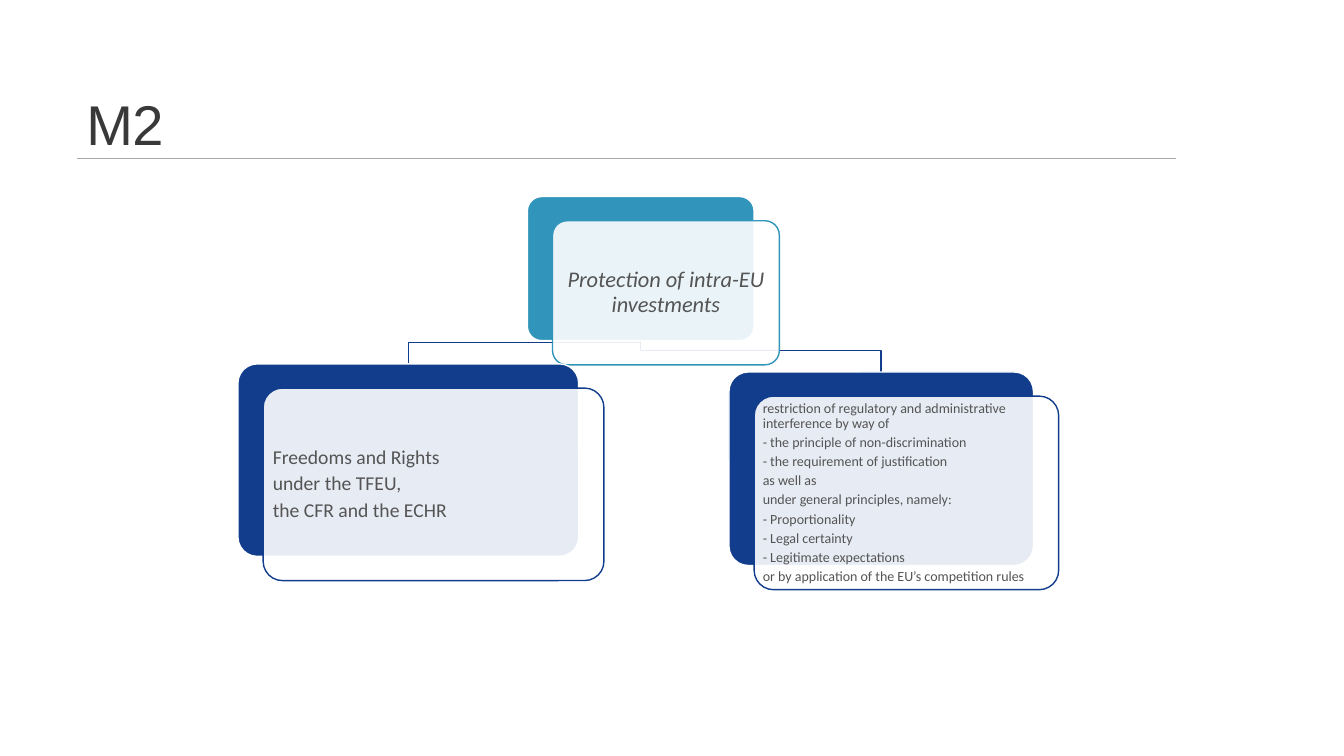
import pptx
import pptx.util
import pptx.dml.color
import pptx.enum.shapes
import pptx.enum.text
import pptx.oxml.ns
import lxml.etree

Inches = pptx.util.Inches
Pt = pptx.util.Pt
ALIGN = pptx.enum.text.PP_ALIGN
ANCHOR = pptx.enum.text.MSO_ANCHOR

COLORS = {
    "title": "393939",
    "rule": "AAAAAA",
    "text": "545454",
    "teal": "3194BA",
    "navy": "123D8C",
    "white": "FFFFFF",
}
CARD_OFFSET = (0.25, 0.24)
ELBOW_RISE = 0.21

TOPIC_BOX = (5.23, 1.95, 2.25, 1.43)
RIGHTS_BOX = (2.36, 3.61, 3.38, 1.91)
LIMITS_BOX = (7.23, 3.69, 3.02, 1.92)

TOPIC = ["Protection of intra-EU investments"]
RIGHTS = ["Freedoms and Rights", "under the TFEU,", "the CFR and the ECHR"]
LIMITS = [
    "restriction of regulatory and administrative interference by way of",
    "- the principle of non-discrimination",
    "- the requirement of justification",
    "as well as",
    "under general principles, namely:",
    "- Proportionality\u00a0",
    "- Legal certainty\u00a0",
    "- Legitimate expectations\u00a0",
    "or by application of the EU’s competition rules",
]


def rgb(name):
    return pptx.dml.color.RGBColor.from_string(COLORS[name])


def set_line(shape, color, width):
    shape.line.color.rgb = rgb(color)
    shape.line.width = Pt(width)


def add_text(paragraph, text, font, size, color):
    run = paragraph.add_run()
    run.text = text
    run.font.name = font
    run.font.size = Pt(size)
    run.font.color.rgb = rgb(color)
    return run


def add_title(slide, box, text):
    left, top, width, height = box
    rule_y = top + height - 0.04
    rule = slide.shapes.add_connector(
        pptx.enum.shapes.MSO_CONNECTOR.STRAIGHT,
        Inches(left), Inches(rule_y), Inches(left + width), Inches(rule_y))
    set_line(rule, "rule", 0.5)
    lxml.etree.SubElement(rule._element.spPr, pptx.oxml.ns.qn("a:effectLst"))

    heading = slide.shapes.add_textbox(*map(Inches, box)).text_frame
    heading.word_wrap = True
    heading.vertical_anchor = ANCHOR.BOTTOM
    heading.paragraphs[0].line_spacing = 0.85
    run = add_text(heading.paragraphs[0], text, "Arial", 40, "title")
    run.font._element.set("spc", "-50")


def add_branch(slide, parent, child):
    start_x = Inches(parent[0] + parent[2] / 2)
    start_y = Inches(parent[1] + parent[3])
    end_x = Inches(child[0] + child[2] / 2)
    elbow_y = Inches(child[1] - ELBOW_RISE)
    builder = slide.shapes.build_freeform(start_x, start_y)
    builder.add_line_segments(
        [(start_x, elbow_y), (end_x, elbow_y), (end_x, Inches(child[1]))], close=False)
    branch = builder.convert_to_shape()
    branch.shadow.inherit = False
    branch.fill.background()
    set_line(branch, "navy", 1)


def add_panel(slide, box, fill, line):
    panel = slide.shapes.add_shape(
        pptx.enum.shapes.MSO_SHAPE.ROUNDED_RECTANGLE, *map(Inches, box))
    panel.adjustments[0] = 0.1
    panel.shadow.inherit = False
    panel.fill.solid()
    panel.fill.fore_color.rgb = rgb(fill)
    set_line(panel, line, 1)
    return panel


def add_card(slide, box, color, lines, size, inset, space=0, align=ALIGN.LEFT, italic=None):
    left, top, width, height = box
    add_panel(slide, box, color, "white")
    front = add_panel(
        slide, (left + CARD_OFFSET[0], top + CARD_OFFSET[1], width, height), "white", color)
    tint = front._element.spPr.find(
        pptx.oxml.ns.qn("a:solidFill") + "/" + pptx.oxml.ns.qn("a:srgbClr"))
    lxml.etree.SubElement(tint, pptx.oxml.ns.qn("a:alpha"), val="90000")

    frame = front.text_frame
    frame.word_wrap = True
    frame.vertical_anchor = ANCHOR.MIDDLE
    frame.margin_left = frame.margin_right = Inches(inset)
    frame.margin_top = frame.margin_bottom = Inches(inset)
    for index, line in enumerate(lines):
        paragraph = frame.add_paragraph() if index else frame.paragraphs[0]
        paragraph.alignment = align
        paragraph.line_spacing = 0.9
        if index:
            paragraph.space_before = Pt(space)
        add_text(paragraph, line, "Calibri", size, "text").font.italic = italic


def main():
    deck = pptx.Presentation()
    deck.slide_width = Inches(13.33)
    deck.slide_height = Inches(7.5)
    slide = deck.slides.add_slide(deck.slide_layouts[6])

    add_title(slide, (0.76, 0.02, 10.9, 1.59), "M2")
    for child in (LIMITS_BOX, RIGHTS_BOX):
        add_branch(slide, TOPIC_BOX, child)
    add_card(slide, TOPIC_BOX, "teal", TOPIC, 16, 0.03, align=ALIGN.CENTER, italic=True)
    add_card(slide, RIGHTS_BOX, "navy", RIGHTS, 14, 0.04, space=3.7)
    add_card(slide, LIMITS_BOX, "navy", LIMITS, 10, 0.03, space=2.9)
    deck.save("out.pptx")


if __name__ == "__main__":
    main()
